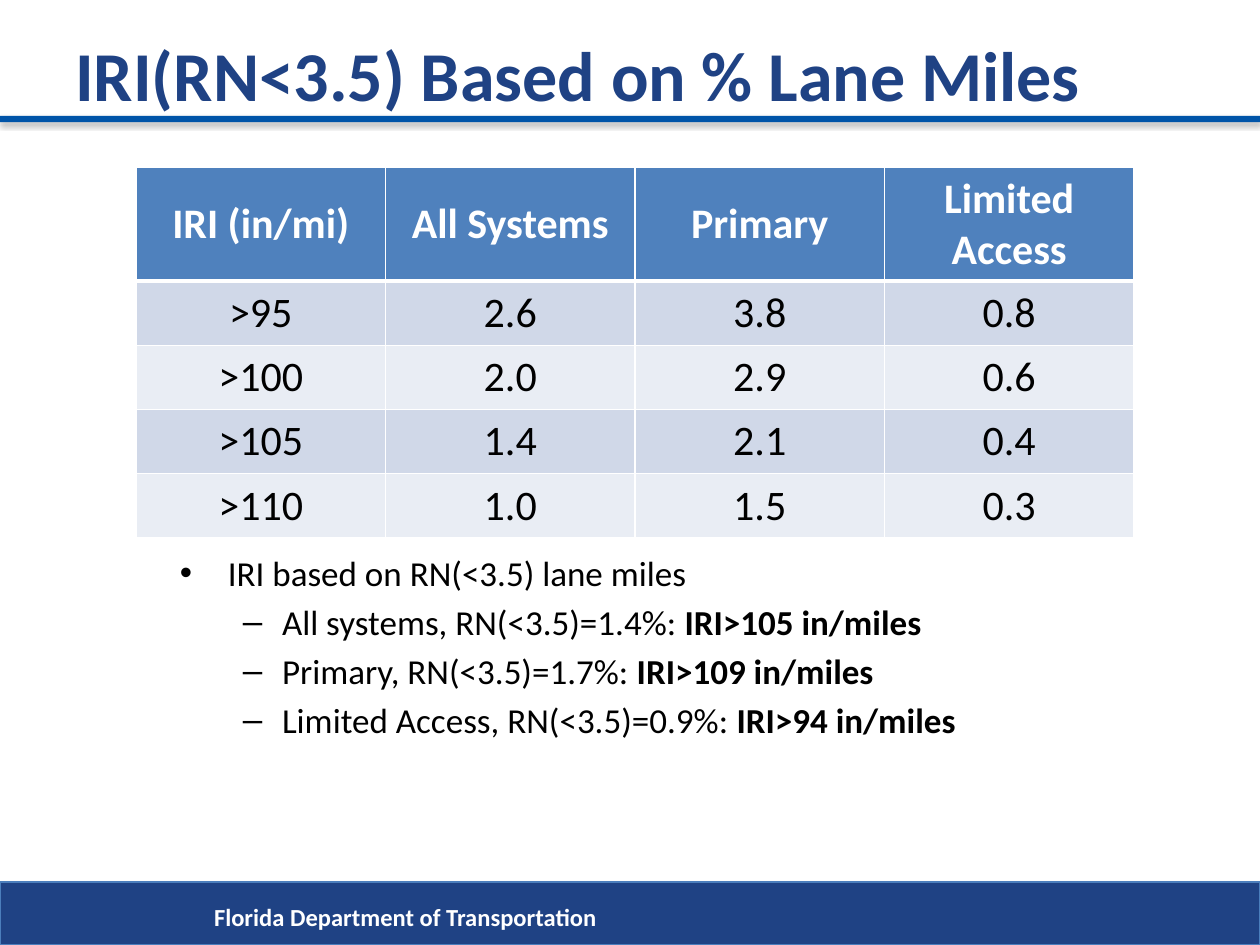
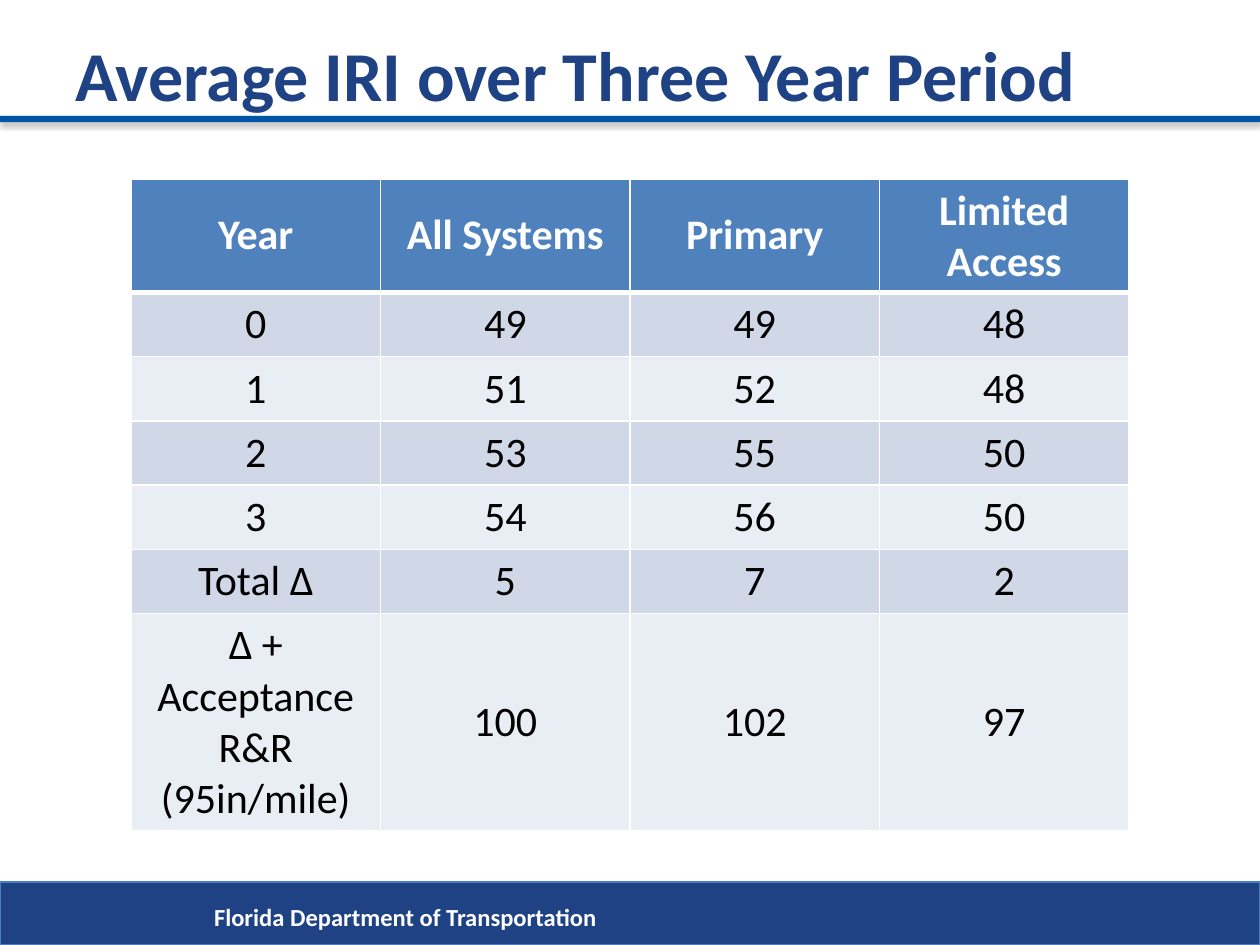
from dataclasses import dataclass

from lxml import etree
from pptx import Presentation
from pptx.dml.color import RGBColor
from pptx.enum.shapes import MSO_SHAPE
from pptx.enum.text import MSO_ANCHOR, PP_ALIGN
from pptx.oxml.ns import qn
from pptx.slide import Slide
from pptx.text.text import TextFrame, _Paragraph
from pptx.util import Inches, Length, Pt

RECTANGLE = MSO_SHAPE.RECTANGLE
TOP, MIDDLE = MSO_ANCHOR.TOP, MSO_ANCHOR.MIDDLE
CENTER = PP_ALIGN.CENTER


@dataclass(frozen=True)
class Theme:
    font: str = "Calibri"
    navy: str = "1F4284"
    rule_blue: str = "0054A8"
    footer_edge: str = "4B7EBC"
    header_fill: str = "4F81BD"
    band_fills: tuple[str, str] = ("D0D8E8", "E9EDF4")
    white: str = "FFFFFF"
    black: str = "000000"
    title_size: int = 40
    table_size: int = 24
    bullet_size: int = 20
    footer_size: int = 14


@dataclass(frozen=True)
class Frame:
    left: float
    top: float
    width: float
    height: float

    def lengths(self) -> tuple[Length, ...]:
        return tuple(Inches(n) for n in (self.left, self.top, self.width, self.height))


@dataclass(frozen=True)
class TextStyle:
    size: int
    color: str
    bold: bool = False


@dataclass(frozen=True)
class Bullet:
    text: str
    result: str = ""


@dataclass(frozen=True)
class DataTable:
    left: float
    top: float
    rows: list[list[str]]
    last_row_height: float


@dataclass(frozen=True)
class TablePage:
    title: str
    table: DataTable
    bullets: tuple[Bullet, ...] = ()


THEME = Theme()
TITLE_STYLE = TextStyle(THEME.title_size, THEME.navy, True)
FOOTER_STYLE = TextStyle(THEME.footer_size, THEME.white, True)
HEADER_STYLE = TextStyle(THEME.table_size, THEME.white, True)
CELL_STYLE = TextStyle(THEME.table_size, THEME.black)
BULLET_STYLE = TextStyle(THEME.bullet_size, THEME.black)
RESULT_STYLE = TextStyle(THEME.bullet_size, THEME.black, True)

TITLE_FRAME = Frame(0.5, 0.01, 9, 1.14)
RULE_FRAME = Frame(0, 0.92, 10, 0.05)
FOOTER_FRAME = Frame(0, 7, 10, 0.5)
FOOTER_TEXT_FRAME = Frame(1.6, 7.11, 7.98, 0.34)
BULLET_FRAME = Frame(1.33, 4.33, 7.42, 1.75)
COLUMN_WIDTH = 1.98
HEADER_HEIGHT = 0.9
ROW_HEIGHT = 0.51
SYSTEMS = ["All Systems", "Primary", "Limited Access"]

PAGES = [
    TablePage(
        "IRI(RN<3.5) Based on % Lane Miles",
        DataTable(1.08, 1.33, [
            ["IRI (in/mi)", *SYSTEMS],
            [">95", "2.6", "3.8", "0.8"],
            [">100", "2.0", "2.9", "0.6"],
            [">105", "1.4", "2.1", "0.4"],
            [">110", "1.0", "1.5", "0.3"],
        ], ROW_HEIGHT),
        (
            Bullet("IRI based on RN(<3.5) lane miles"),
            Bullet("All systems, RN(<3.5)=1.4%: ", "IRI>105 in/miles"),
            Bullet("Primary, RN(<3.5)=1.7%: ", "IRI>109 in/miles"),
            Bullet("Limited Access, RN(<3.5)=0.9%: ", "IRI>94 in/miles"),
        ),
    ),
    TablePage(
        "Average IRI over Three Year Period",
        DataTable(1.04, 1.42, [
            ["Year", *SYSTEMS],
            ["0", "49", "49", "48"],
            ["1", "51", "52", "48"],
            ["2", "53", "55", "50"],
            ["3", "54", "56", "50"],
            ["Total Δ", "5", "7", "2"],
            ["Δ + Acceptance R&R (95in/mile)", "100", "102", "97"],
        ], 1.72),
    ),
]


def add_span(para: _Paragraph, text: str, style: TextStyle) -> None:
    span = para.add_run()
    span.text = text
    span.font.name = THEME.font
    span.font.size = Pt(style.size)
    span.font.bold = style.bold
    span.font.color.rgb = RGBColor.from_string(style.color)


def add_text_frame(page: Slide, frame: Frame, anchor: MSO_ANCHOR = TOP) -> TextFrame:
    text_frame = page.shapes.add_textbox(*frame.lengths()).text_frame
    text_frame.word_wrap = True
    text_frame.vertical_anchor = anchor
    return text_frame


def add_band(page: Slide, frame: Frame, fill: str, edge: str | None = None) -> None:
    band = page.shapes.add_shape(RECTANGLE, *frame.lengths())
    band.fill.solid()
    band.fill.fore_color.rgb = RGBColor.from_string(fill)
    if edge:
        band.line.color.rgb = RGBColor.from_string(edge)
        band.line.width = Pt(0.75)
    else:
        band.line.fill.background()
    band.shadow.inherit = False
    effects = band._element.spPr.find(qn("a:effectLst"))
    shadow = etree.SubElement(
        effects, qn("a:outerShdw"), blurRad=str(Pt(3.1)), dist=str(Pt(1.8)),
        dir="5400000", rotWithShape="0",
    )
    color = etree.SubElement(shadow, qn("a:srgbClr"), val=THEME.black)
    etree.SubElement(color, qn("a:alpha"), val="35000")


def add_cell_borders(cell, top: float, bottom: float) -> None:
    properties = cell._tc.get_or_add_tcPr()
    for side, width in (("L", 1), ("R", 1), ("T", top), ("B", bottom)):
        line = etree.SubElement(properties, qn(f"a:ln{side}"), w=str(Pt(width)))
        fill = etree.SubElement(line, qn("a:solidFill"))
        etree.SubElement(fill, qn("a:srgbClr"), val=THEME.white)


def add_data_table(page: Slide, data: DataTable) -> None:
    row_count, column_count = len(data.rows), len(data.rows[0])
    heights = [HEADER_HEIGHT, *[ROW_HEIGHT] * (row_count - 2), data.last_row_height]
    frame = Frame(data.left, data.top, COLUMN_WIDTH * column_count, sum(heights))
    table = page.shapes.add_table(row_count, column_count, *frame.lengths()).table
    table.horz_banding = False
    for column in table.columns:
        column.width = Inches(COLUMN_WIDTH)
    for row_index, values in enumerate(data.rows):
        is_header = row_index == 0
        fill = THEME.header_fill if is_header else THEME.band_fills[(row_index - 1) % 2]
        table.rows[row_index].height = Inches(heights[row_index])
        for column_index, value in enumerate(values):
            cell = table.cell(row_index, column_index)
            add_cell_borders(cell, 3 if row_index == 1 else 1, 3 if is_header else 1)
            cell.fill.solid()
            cell.fill.fore_color.rgb = RGBColor.from_string(fill)
            cell.vertical_anchor = MIDDLE
            para = cell.text_frame.paragraphs[0]
            para.alignment = CENTER
            add_span(para, value, HEADER_STYLE if is_header else CELL_STYLE)


def add_bullets(page: Slide, bullets: tuple[Bullet, ...]) -> None:
    text_frame = add_text_frame(page, BULLET_FRAME)
    for index, bullet in enumerate(bullets):
        para = text_frame.add_paragraph() if index else text_frame.paragraphs[0]
        mark, margin, hanging = ("–", 0.81, 0.31) if bullet.result else ("•", 0.38, 0.38)
        properties = para._p.get_or_add_pPr()
        properties.set("marL", str(Inches(margin)))
        properties.set("indent", str(-Inches(hanging)))
        etree.SubElement(properties, qn("a:buFont"), typeface="Arial")
        etree.SubElement(properties, qn("a:buChar"), char=mark)
        if index:
            para.level = 1
            para.space_before = Pt(THEME.bullet_size * 0.2)
        add_span(para, bullet.text, BULLET_STYLE)
        if bullet.result:
            add_span(para, bullet.result, RESULT_STYLE)


def add_page_base(page: Slide, title: str) -> None:
    add_band(page, FOOTER_FRAME, THEME.navy, THEME.footer_edge)
    footer = add_text_frame(page, FOOTER_TEXT_FRAME)
    add_span(footer.paragraphs[0], "Florida Department of Transportation", FOOTER_STYLE)
    add_band(page, RULE_FRAME, THEME.rule_blue)
    heading = add_text_frame(page, TITLE_FRAME, MIDDLE)
    add_span(heading.paragraphs[0], title, TITLE_STYLE)


def main() -> None:
    deck = Presentation()
    deck.slide_width, deck.slide_height = Inches(10), Inches(7.5)
    for content in PAGES:
        page = deck.slides.add_slide(deck.slide_layouts[6])
        add_page_base(page, content.title)
        add_data_table(page, content.table)
        if content.bullets:
            add_bullets(page, content.bullets)
    deck.save("out.pptx")


if __name__ == "__main__":
    main()
